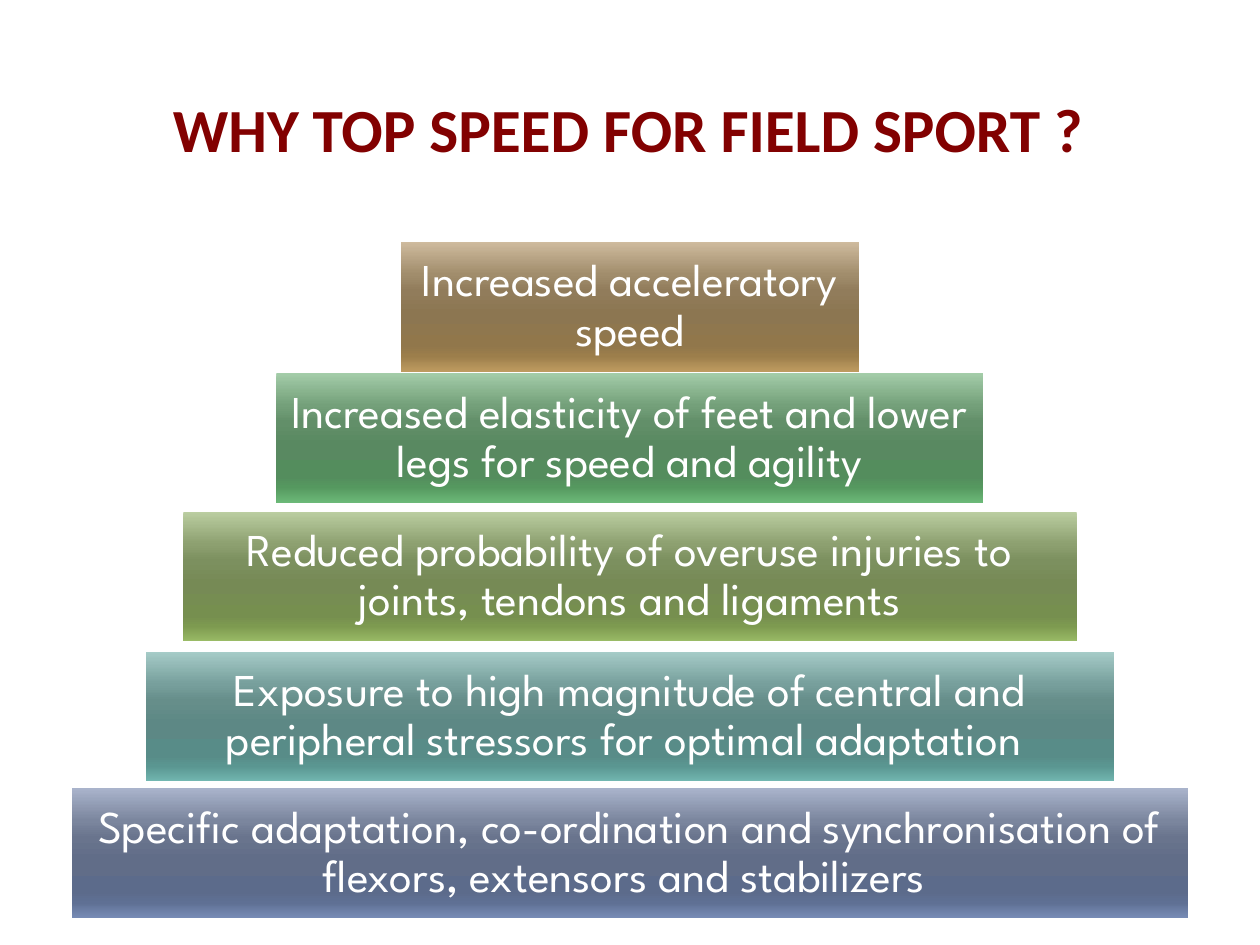
from dataclasses import dataclass

from lxml import etree
from pptx import Presentation
from pptx.dml.color import RGBColor
from pptx.enum.shapes import MSO_SHAPE
from pptx.enum.text import MSO_ANCHOR, PP_ALIGN
from pptx.oxml.ns import qn
from pptx.util import Pt

RECTANGLE = MSO_SHAPE.RECTANGLE
MIDDLE = MSO_ANCHOR.MIDDLE
CENTER = PP_ALIGN.CENTER

PAGE_WIDTH, PAGE_HEIGHT = 720, 540
STEP_HEIGHT = 74.2
STEP_INSET = 5
GRADIENT_POSITIONS = (0, 25, 38, 55, 80, 88, 100)

# Each step lists its gradient colours from top to bottom.
COLOURS = {
    "title": "820101",
    "text": "FFFFFF",
    "brown": "CFBB9E A18D6C 917C5B 8C7651 91774B 9C7E4B BE9B60",
    "green": "A4CDA9 74A07A 628F69 598961 548D5D 55985F 6CB978",
    "olive": "BBCEA1 8DA070 7C905F 768A55 768F4F 7D9A50 9ABB66",
    "teal": "A6CCC8 779F9C 668E8A 5D8885 588C88 5A9691 72B7B1",
    "blue": "A9B3CB 7B869E 69748D 616D88 5C6B8B 5F7094 778BB5",
}


@dataclass(frozen=True)
class Step:
    text: str
    top: float
    width: float
    colour: str


STEPS = (
    Step("Increased acceleratory speed", 138.2, 262, "brown"),
    Step("Increased elasticity of feet and lower legs for speed and agility",
         213.1, 404, "green"),
    Step("Reduced probability of overuse injuries to joints, tendons and ligaments",
         292.4, 510.4, "olive"),
    Step("Exposure to high magnitude of central and peripheral stressors "
         "for optimal adaptation ", 372.4, 553, "teal"),
    Step("Specific adaptation, co-ordination and synchronisation of flexors, "
         "extensors and stabilizers ", 450.5, 638, "blue"),
)


def write_text(shape, text: str, size: float, font_name: str, colour: str,
               bold: bool = False):
    frame = shape.text_frame
    frame.word_wrap = True
    frame.vertical_anchor = MIDDLE
    frame.text = text
    para = frame.paragraphs[0]
    para.alignment = CENTER
    para.font.size = Pt(size)
    para.font.name = font_name
    para.font.bold = bold
    para.font.color.rgb = RGBColor.from_string(COLOURS[colour])
    return frame


def fill_downwards(shape, colours: list[str]) -> None:
    """Fill the shape with a gradient that runs from top to bottom."""
    shape.fill.gradient()
    shape.fill.gradient_angle = 270
    stops = shape._element.spPr.find(qn("a:gradFill")).find(qn("a:gsLst"))
    for stop in list(stops):
        stops.remove(stop)
    for position, colour in zip(GRADIENT_POSITIONS, colours):
        stop = etree.SubElement(stops, qn("a:gs"), pos=str(position * 1000))
        etree.SubElement(stop, qn("a:srgbClr"), val=colour)


def add_title(page) -> None:
    box = page.shapes.add_textbox(Pt(34), Pt(32.4), Pt(650), Pt(82))
    write_text(box, "WHY TOP SPEED FOR FIELD SPORT ?", 35, "Calibri", "title", True)


def add_step(page, step: Step) -> None:
    left = (PAGE_WIDTH - step.width) / 2
    block = page.shapes.add_shape(RECTANGLE, Pt(left), Pt(step.top),
                                  Pt(step.width), Pt(STEP_HEIGHT))
    block.shadow.inherit = False
    block.line.fill.background()
    fill_downwards(block, COLOURS[step.colour].split())
    frame = write_text(block, step.text, 26, "League Spartan", "text")
    frame.margin_left = frame.margin_right = Pt(STEP_INSET)
    frame.margin_top = frame.margin_bottom = Pt(STEP_INSET)
    frame.paragraphs[0].line_spacing = 0.9


def main() -> None:
    deck = Presentation()
    deck.slide_width, deck.slide_height = Pt(PAGE_WIDTH), Pt(PAGE_HEIGHT)
    page = deck.slides.add_slide(deck.slide_layouts[6])
    add_title(page)
    for step in STEPS:
        add_step(page, step)
    deck.save("out.pptx")


if __name__ == "__main__":
    main()
